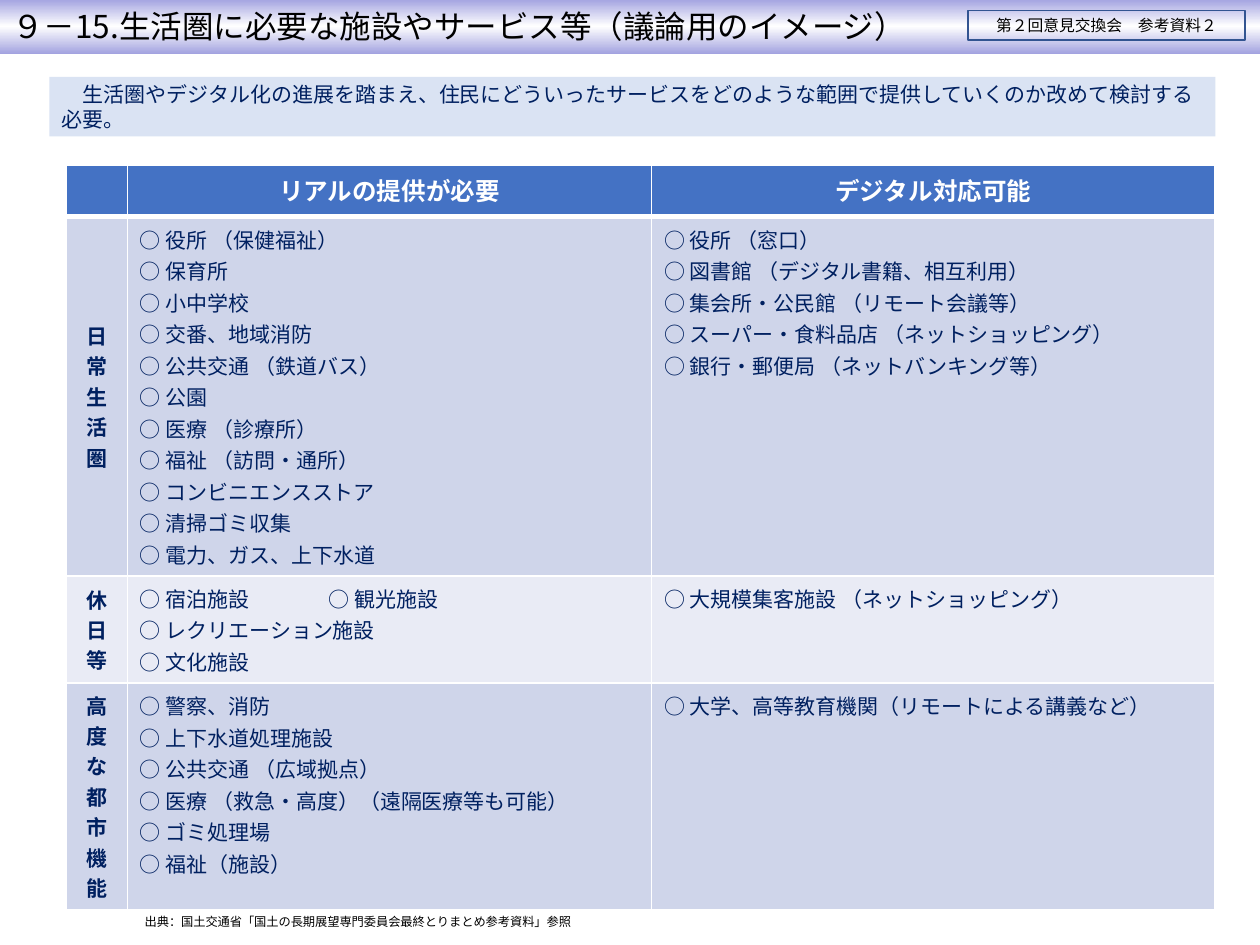
from copy import deepcopy

from lxml import etree
from pptx import Presentation
from pptx.dml.color import RGBColor
from pptx.enum.shapes import MSO_SHAPE
from pptx.enum.text import MSO_ANCHOR, PP_ALIGN
from pptx.oxml.ns import qn
from pptx.util import Pt

RECTANGLE = MSO_SHAPE.RECTANGLE
TOP, MIDDLE = MSO_ANCHOR.TOP, MSO_ANCHOR.MIDDLE
LEFT, CENTER = PP_ALIGN.LEFT, PP_ALIGN.CENTER

FONT = "Noto Sans CJK JP"
COLORS = {
    "black": "000000", "white": "FFFFFF", "navy": "002060",
    "pale_blue": "DAE3F3", "header": "4472C4", "frame": "325491",
    "band_dark": "CFD5EA", "band_light": "E9EBF5",
    "lilac_top": "A1A1E0", "lilac_bottom": "A3A3E0",
}


def rgb(name):
    return RGBColor.from_string(COLORS[name])


class SlideBuilder:
    def __init__(self, slide):
        self.slide = slide

    def add_lines(self, frame, lines, size, color, align=LEFT, bold=False,
                  spacing=None, indent=0, tab=None):
        """Add one paragraph per line, all in the same format."""
        for number, line in enumerate(lines):
            paragraph = frame.paragraphs[0] if number == 0 else frame.add_paragraph()
            paragraph.alignment = align
            if spacing:
                paragraph.line_spacing = Pt(spacing)
            properties = paragraph._p.get_or_add_pPr()
            if indent:
                properties.set("indent", str(Pt(indent)))
            if tab and "\t" in line:
                tabs = etree.SubElement(properties, qn("a:tabLst"))
                etree.SubElement(tabs, qn("a:tab"), pos=str(Pt(tab)), algn="l")
            run = paragraph.add_run()
            run.text = line
            font_format = {"name": FONT, "size": Pt(size), "bold": bold}
            for attribute, value in font_format.items():
                setattr(run.font, attribute, value)
            run.font.color.rgb = rgb(color)
            etree.SubElement(run._r.get_or_add_rPr(), qn("a:ea"), typeface=FONT)

    def box(self, bounds, text, size, color="black", fill=None, line=None,
            anchor=MIDDLE, align=LEFT, indent=0):
        shape = self.slide.shapes.add_shape(RECTANGLE, *map(Pt, bounds))
        shape.shadow.inherit = False
        if fill:
            shape.fill.solid()
            shape.fill.fore_color.rgb = rgb(fill)
        else:
            shape.fill.background()
        if line:
            shape.line.color.rgb = rgb(line)
            shape.line.width = Pt(1)
        else:
            shape.line.fill.background()
        frame = shape.text_frame
        for attribute, value in {"word_wrap": True, "vertical_anchor": anchor}.items():
            setattr(frame, attribute, value)
        self.add_lines(frame, [text], size, color, align, indent=indent)
        return shape

    def gradient(self, shape, colors):
        """Fill from top to bottom with evenly spaced colour stops."""
        shape.fill.gradient()
        shape.fill.gradient_angle = 270
        stop_list = shape._element.spPr.find(".//" + qn("a:gsLst"))
        for _ in colors[2:]:
            stop_list.append(deepcopy(stop_list[0]))
        for number, (stop, color) in enumerate(zip(shape.fill.gradient_stops, colors)):
            stop.position = number / (len(colors) - 1)
            stop.color.rgb = rgb(color)

    def cell_style(self, cell, fill, bottom=1):
        properties = cell._tc.get_or_add_tcPr()
        for side, width in {"lnL": 1, "lnR": 1, "lnT": 1, "lnB": bottom}.items():
            border = etree.SubElement(properties, qn("a:" + side), w=str(Pt(width)))
            solid = etree.SubElement(border, qn("a:solidFill"))
            etree.SubElement(solid, qn("a:srgbClr"), val=COLORS["white"])
        cell.fill.solid()
        cell.fill.fore_color.rgb = rgb(fill)

    def facility_table(self, bounds, widths, heights, headings, areas):
        table = self.slide.shapes.add_table(
            len(heights), len(widths), *map(Pt, bounds)).table
        for column, width in zip(table.columns, widths):
            column.width = Pt(width)
        for row, height in zip(table.rows, heights):
            row.height = Pt(height)

        # Heading row
        for column, heading in enumerate(headings):
            cell = table.cell(0, column)
            self.cell_style(cell, "header", bottom=3)
            if heading:
                self.add_lines(cell.text_frame, [heading], 14, "white", CENTER, bold=True)

        # One row per area, with a vertical label
        for row, (area, *services) in enumerate(areas, start=1):
            fill = "band_dark" if row % 2 else "band_light"
            label = table.cell(row, 0)
            self.cell_style(label, fill)
            label.vertical_anchor = MIDDLE
            label._tc.tcPr.set("vert", "eaVert")
            self.add_lines(label.text_frame, [area], 12, "navy", CENTER, bold=True)
            for column, names in enumerate(services, start=1):
                cell = table.cell(row, column)
                self.cell_style(cell, fill)
                self.add_lines(cell.text_frame, ["○ " + name for name in names],
                               12, "navy", spacing=18, tab=108)


HEADINGS = ["", "リアルの提供が必要", "デジタル対応可能"]
AREAS = [
    ("日常生活圏",
     ["役所 （保健福祉）", "保育所", "小中学校", "交番、地域消防",
      "公共交通 （鉄道バス）", "公園", "医療 （診療所）", "福祉 （訪問・通所）",
      "コンビニエンスストア", "清掃ゴミ収集", "電力、ガス、上下水道"],
     ["役所 （窓口）", "図書館 （デジタル書籍、相互利用）",
      "集会所・公民館 （リモート会議等）",
      "スーパー・食料品店 （ネットショッピング）",
      "銀行・郵便局 （ネットバンキング等）"]),
    ("休日等",
     ["宿泊施設\t○ 観光施設", "レクリエーション施設", "文化施設"],
     ["大規模集客施設 （ネットショッピング）"]),
    ("高度な都市機能",
     ["警察、消防", "上下水道処理施設", "公共交通 （広域拠点）",
      "医療 （救急・高度）（遠隔医療等も可能）", "ゴミ処理場", "福祉（施設）"],
     ["大学、高等教育機関（リモートによる講義など）"]),
]


def main():
    presentation = Presentation()
    presentation.slide_width, presentation.slide_height = Pt(720), Pt(540)
    builder = SlideBuilder(presentation.slides.add_slide(presentation.slide_layouts[6]))

    # Source note
    builder.box((75.6, 519, 366, 16),
                "出典：国土交通省「国土の長期展望専門委員会最終とりまとめ参考資料」参照",
                7, fill="white", anchor=TOP)

    # Key message
    builder.box((28.3, 44, 666.2, 34),
                "生活圏やデジタル化の進展を踏まえ、住民にどういったサービスを"
                "どのような範囲で提供していくのか改めて検討する必要。",
                12, "navy", fill="pale_blue", indent=12)

    # Facilities by area
    builder.facility_table((37.8, 94.6, 656.6, 422.6), (35, 299.6, 322),
                           (26.6, 205.2, 61.2, 129.6), HEADINGS, AREAS)

    # Title band and document label
    title_band = builder.box((0, -0.8, 720, 31.6),
                             "９－15.生活圏に必要な施設やサービス等（議論用のイメージ）", 18)
    builder.gradient(title_band, ["lilac_top", "white", "lilac_bottom"])
    builder.box((553, 6, 158.4, 17), "第２回意見交換会　参考資料２", 9,
                line="frame", align=CENTER)

    presentation.save("out.pptx")


if __name__ == "__main__":
    main()
